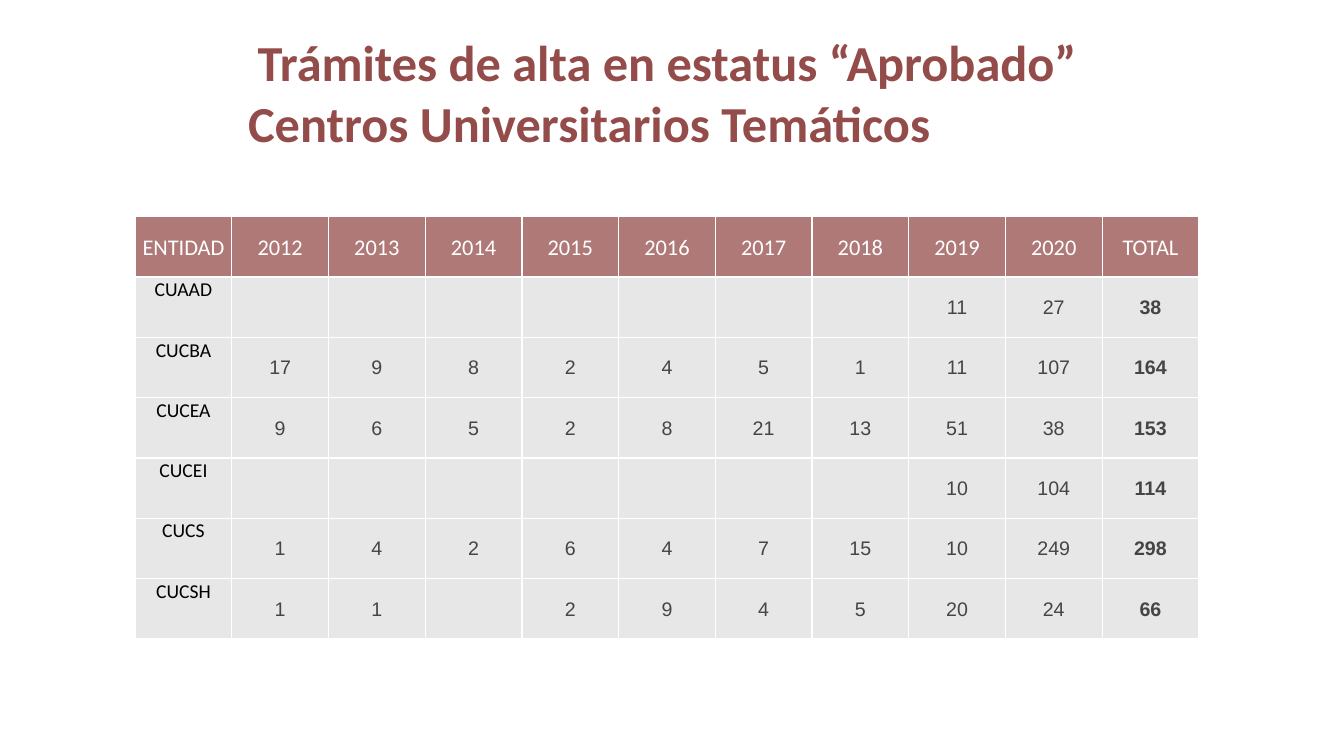
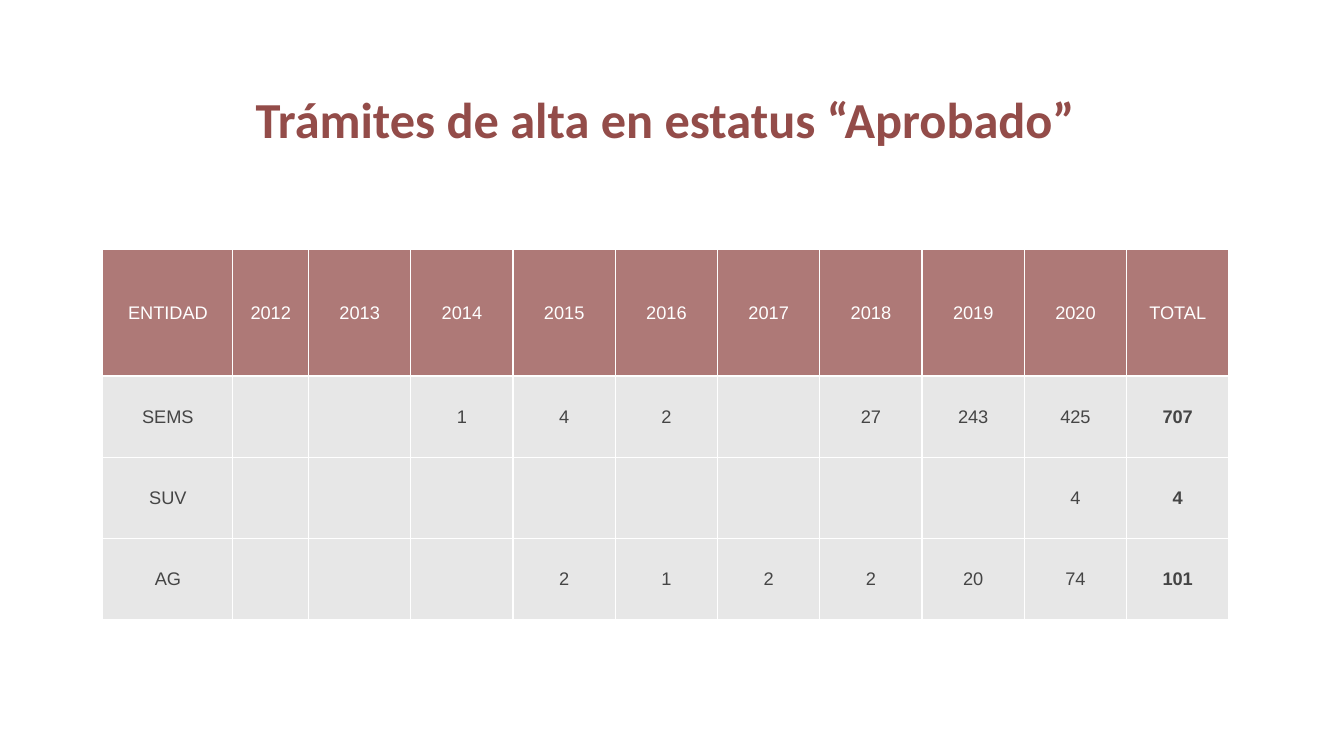
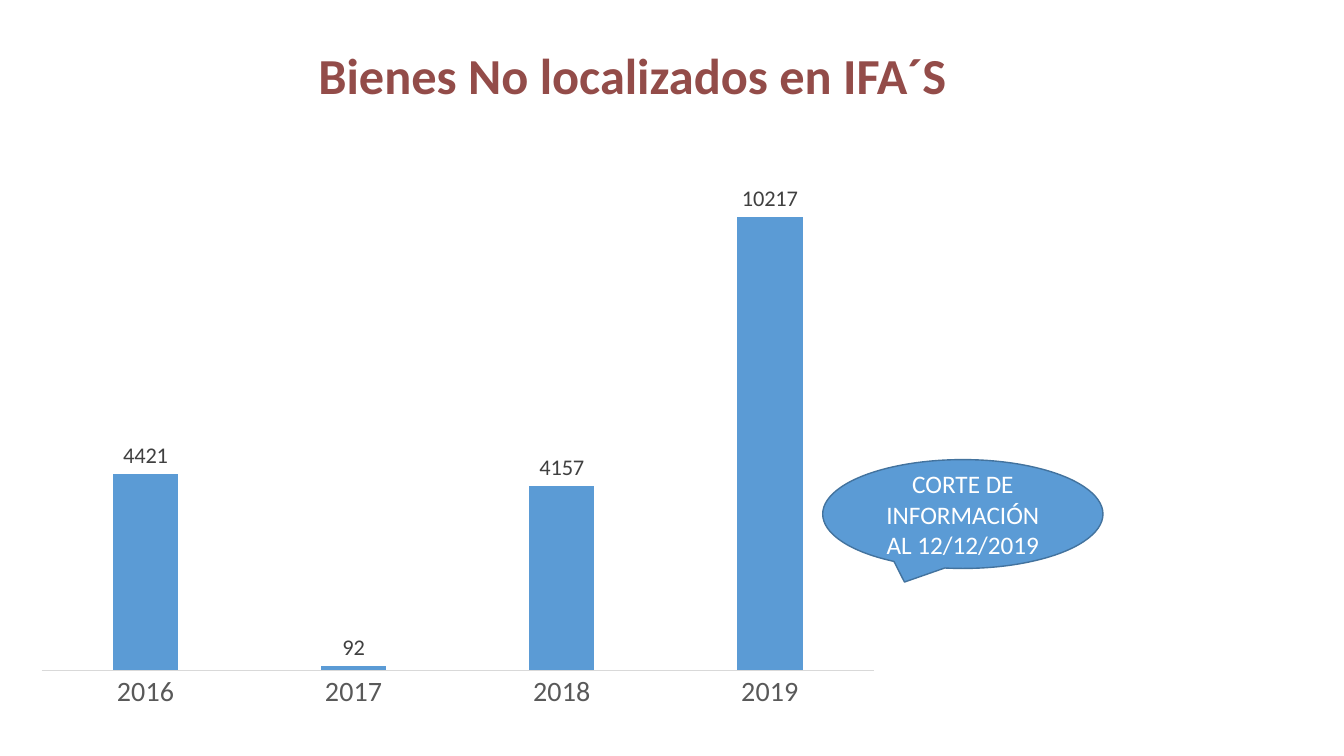
from dataclasses import dataclass

from lxml.etree import SubElement
from pptx import Presentation
from pptx.chart.data import CategoryChartData
from pptx.dml.color import RGBColor
from pptx.enum.chart import XL_CHART_TYPE as ChartType
from pptx.enum.chart import XL_LABEL_POSITION as LabelPosition
from pptx.enum.chart import XL_TICK_MARK as TickMark
from pptx.enum.shapes import MSO_SHAPE as Shape
from pptx.enum.text import MSO_ANCHOR as Anchor
from pptx.enum.text import MSO_AUTO_SIZE as AutoSize
from pptx.enum.text import PP_ALIGN as Align
from pptx.oxml.ns import qn
from pptx.util import Inches, Pt


@dataclass(frozen=True)
class Theme:
    main_font: str = "Calibri"
    number_font: str = "Arial"
    title: str = "934C49"
    header: str = "AE7977"
    body: str = "E7E7E7"
    number: str = "454545"
    black: str = "000000"
    white: str = "FFFFFF"
    blue: str = "5B9BD5"
    blue_line: str = "43739E"
    axis_text: str = "595959"
    axis_line: str = "D9D9D9"
    label_text: str = "404040"
    title_size: int = 36
    axis_size: int = 20
    callout_size: int = 18
    label_size: int = 16


THEME = Theme()


def set_font(font, name, size, color, bold=False):
    for attribute, value in {"name": name, "size": Pt(size), "bold": bold}.items():
        setattr(font, attribute, value)
    font.color.rgb = RGBColor.from_string(color)


def add_titled_slide(presentation, box, lines):
    """Add a Title Only slide; lines holds (text, alignment) pairs."""
    slide = presentation.slides.add_slide(presentation.slide_layouts[5])
    title = slide.shapes.title
    title.left, title.top, title.width, title.height = map(Inches, box)
    frame = title.text_frame
    frame.text = "\n".join(text for text, _ in lines)
    frame.word_wrap = True
    frame.auto_size = AutoSize.NONE
    frame.vertical_anchor = Anchor.TOP
    for paragraph, (_, alignment) in zip(frame.paragraphs, lines):
        paragraph.alignment = alignment
        set_font(paragraph.font, THEME.main_font, THEME.title_size, THEME.title, True)
    return slide


presentation = Presentation()
presentation.slide_width = Inches(13.33)
presentation.slide_height = Inches(7.5)

# Table slides: fonts are (name, size); the first widths and heights are fixed
# and the remaining columns and rows share what is left
header_row = ["ENTIDAD", *range(2012, 2021), "TOTAL"]
approved = "Trámites de alta en estatus “Aprobado”"
table_slides = [
    {
        "title_box": (2.36, 0.26, 8.52, 1.31),
        "title": [(approved, Align.CENTER), ("Centros Universitarios Temáticos", Align.LEFT)],
        "table_box": (1.34, 2.15, 10.55, 4.19),
        "widths": [],
        "heights": [],
        "header_font": (THEME.main_font, 16),
        "entity_font": (THEME.main_font, 14, THEME.black),
        "entity_anchor": Anchor.TOP,
        "number_size": 14,
        "rows": [
            ["CUAAD", "", "", "", "", "", "", "", 11, 27, 38],
            ["CUCBA", 17, 9, 8, 2, 4, 5, 1, 11, 107, 164],
            ["CUCEA", 9, 6, 5, 2, 8, 21, 13, 51, 38, 153],
            ["CUCEI", "", "", "", "", "", "", "", 10, 104, 114],
            ["CUCS", 1, 4, 2, 6, 4, 7, 15, 10, 249, 298],
            ["CUCSH", 1, 1, "", 2, 9, 4, 5, 20, 24, 66],
        ],
    },
    {
        "title_box": (2.34, 0.82, 8.52, 0.71),
        "title": [(approved, Align.CENTER)],
        "table_box": (1.02, 2.47, 11.17, 3.68),
        "widths": [1.29, 0.75],
        "heights": [1.26],
        "header_font": (THEME.number_font, 13),
        "entity_font": (THEME.number_font, 13, THEME.number),
        "entity_anchor": Anchor.MIDDLE,
        "number_size": 13,
        "rows": [
            ["SEMS", "", "", 1, 4, 2, "", 27, 243, 425, 707],
            ["SUV", "", "", "", "", "", "", "", "", 4, 4],
            ["AG", "", "", "", 2, 1, 2, 2, 20, 74, 101],
        ],
    },
]

for content in table_slides:
    slide = add_titled_slide(presentation, content["title_box"], content["title"])
    rows = [header_row, *content["rows"]]
    box = content["table_box"]
    last_column = len(header_row) - 1
    table = slide.shapes.add_table(len(rows), len(header_row), *map(Inches, box)).table
    table.horz_banding = False

    # Column widths and row heights
    for tracks, attribute, total, fixed in (
        (table.columns, "width", box[2], content["widths"]),
        (table.rows, "height", box[3], content["heights"]),
    ):
        shared = (total - sum(fixed)) / (len(tracks) - len(fixed))
        for index, track in enumerate(tracks):
            setattr(track, attribute, Inches(fixed[index] if index < len(fixed) else shared))

    # Cells
    for row_index, row in enumerate(rows):
        for column_index, value in enumerate(row):
            cell = table.cell(row_index, column_index)
            is_header = row_index == 0
            is_entity = column_index == 0 and not is_header
            cell_format = {
                "text": str(value),
                "vertical_anchor": content["entity_anchor"] if is_entity else Anchor.MIDDLE,
                "margin_left": Inches(0.01),
                "margin_right": Inches(0.01),
                "margin_top": Inches(0.01),
                "margin_bottom": 0,
            }
            for attribute, setting in cell_format.items():
                setattr(cell, attribute, setting)

            paragraph = cell.text_frame.paragraphs[0]
            paragraph.alignment = Align.CENTER
            if is_header:
                set_font(paragraph.font, *content["header_font"], THEME.white)
            elif is_entity:
                set_font(paragraph.font, *content["entity_font"])
            else:
                set_font(paragraph.font, THEME.number_font, content["number_size"],
                         THEME.number, column_index == last_column)

            # Borders go before the fill in the cell properties
            properties = cell._tc.get_or_add_tcPr()
            for side in ("a:lnL", "a:lnR", "a:lnT", "a:lnB"):
                border = SubElement(properties, qn(side), w=str(Pt(1)))
                border_fill = SubElement(border, qn("a:solidFill"))
                SubElement(border_fill, qn("a:srgbClr"), val=THEME.white)
            cell.fill.solid()
            cell.fill.fore_color.rgb = RGBColor.from_string(
                THEME.header if is_header else THEME.body)

# Chart slide
slide = add_titled_slide(presentation, (0.55, 0.39, 11.45, 0.71),
                         [("Bienes No localizados en IFA´S", Align.CENTER)])
chart_data = CategoryChartData()
chart_data.categories = ["2016", "2017", "2018", "2019"]
chart_data.add_series("Series 1", [4421, 92, 4157, 10217])
chart = slide.shapes.add_chart(
    ChartType.COLUMN_CLUSTERED, *map(Inches, (0.24, 1.25, 8.6, 5.9)), chart_data).chart
chart.has_title = False
chart.has_legend = False
set_font(chart.font, THEME.main_font, THEME.axis_size, THEME.black)

# Columns and their labels
plot = chart.plots[0]
plot.vary_by_categories = False
plot.gap_width = 219
plot.overlap = -27
series = plot.series[0]
series.format.fill.solid()
series.format.fill.fore_color.rgb = RGBColor.from_string(THEME.blue)
labels = series.data_labels
labels.show_value = True
labels.position = LabelPosition.OUTSIDE_END
set_font(labels.font, THEME.main_font, THEME.label_size, THEME.label_text)

# Axes
value_axis = chart.value_axis
value_axis.visible = False
value_axis.has_major_gridlines = False
value_axis.minimum_scale = 0
value_axis.maximum_scale = 12000
category_axis = chart.category_axis
category_axis.major_tick_mark = TickMark.NONE
category_axis.format.line.color.rgb = RGBColor.from_string(THEME.axis_line)
category_axis.format.line.width = Pt(0.75)
set_font(category_axis.tick_labels.font, THEME.main_font, THEME.axis_size, THEME.axis_text)

# Cut-off date callout
callout = slide.shapes.add_shape(Shape.OVAL_CALLOUT, *map(Inches, (8.16, 4.56, 2.78, 1.08)))
callout.shadow.inherit = False
callout.fill.solid()
callout.fill.fore_color.rgb = RGBColor.from_string(THEME.blue)
callout.line.color.rgb = RGBColor.from_string(THEME.blue_line)
callout.line.width = Pt(1)
frame = callout.text_frame
frame.text = "CORTE DE INFORMACIÓN AL 12/12/2019"
frame.word_wrap = True
frame.vertical_anchor = Anchor.MIDDLE
paragraph = frame.paragraphs[0]
paragraph.alignment = Align.CENTER
set_font(paragraph.font, THEME.main_font, THEME.callout_size, THEME.white)

presentation.save("out.pptx")
